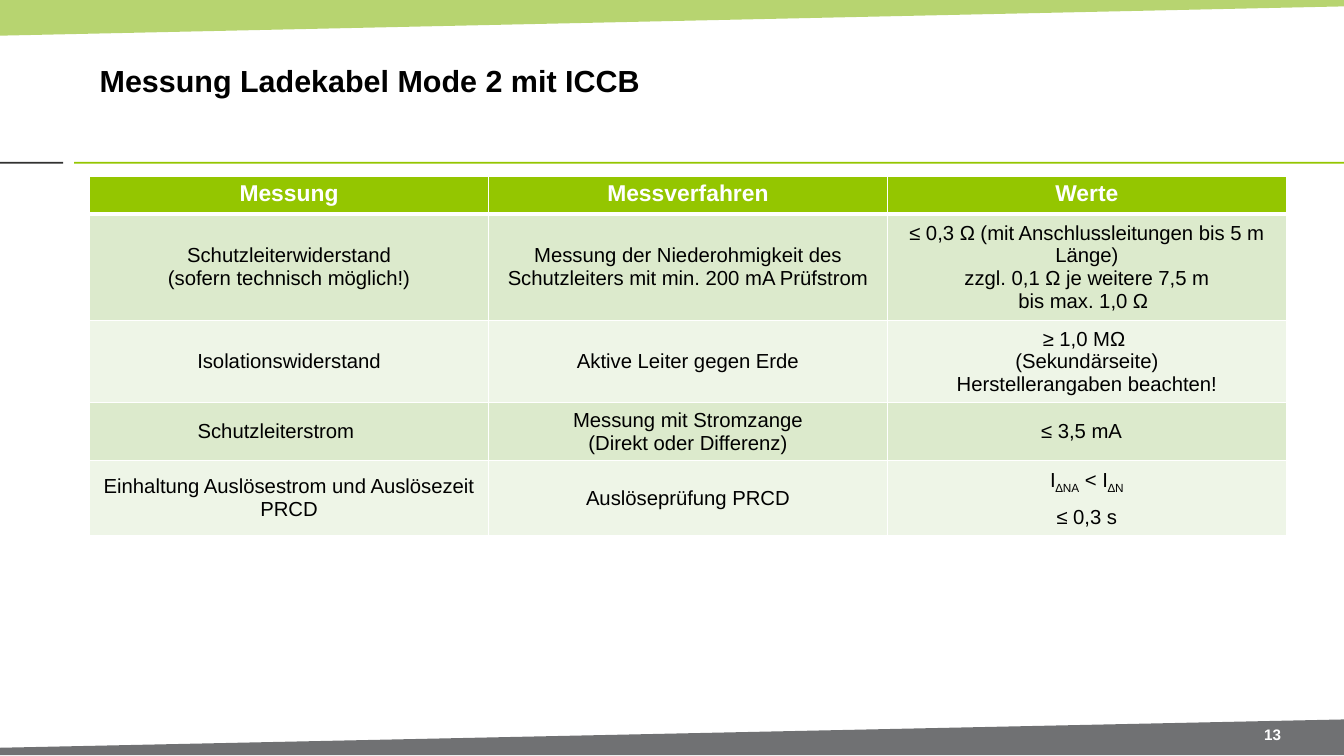
from lxml.etree import SubElement as Sub
from pptx import Presentation
from pptx.dml.color import RGBColor
from pptx.enum.shapes import MSO_SHAPE as Shape
from pptx.enum.text import MSO_ANCHOR as Anchor, PP_ALIGN as Align
from pptx.oxml.ns import qn
from pptx.util import Inches, Pt

FONT = "Arial"
BLACK = RGBColor(0x00, 0x00, 0x00)
WHITE = RGBColor(0xFF, 0xFF, 0xFF)
DARK = RGBColor(0x31, 0x31, 0x30)
GREY = RGBColor(0x70, 0x71, 0x73)
LEAF = RGBColor(0x95, 0xC0, 0x2A)
GREEN = RGBColor(0x94, 0xC6, 0x00)
BANDS = RGBColor(0xDC, 0xEA, 0xCC), RGBColor(0xEE, 0xF5, 0xE7)

HEAD = ["Messung", "Messverfahren", "Werte"]
ROWS = [
    ["Schutzleiterwiderstand\n(sofern technisch möglich!)",
     "Messung der Niederohmigkeit des Schutzleiters mit min. 200 mA Prüfstrom",
     "≤ 0,3 Ω (mit Anschlussleitungen bis 5 m Länge)\n"
     "zzgl. 0,1 Ω je weitere 7,5 m\nbis max. 1,0 Ω\t"],
    ["Isolationswiderstand", "Aktive Leiter gegen Erde",
     "≥ 1,0 MΩ \n(Sekundärseite)\nHerstellerangaben beachten!"],
    ["Schutzleiterstrom\t", "Messung mit Stromzange\n(Direkt oder Differenz)",
     "≤ 3,5 mA\t"],
    ["Einhaltung Auslösestrom und Auslösezeit PRCD", "Auslöseprüfung PRCD", ""],
]
LIMITS = [[("I", 0), ("∆NA", -25), (" < I", 0), ("∆N", -25)], [("≤ 0,3 s", 0)]]
HIGHS = [0.41, 1.08, 0.84, 0.6, 0.78]


class Deck:
    """Holds the style and the current slide, and draws its elements."""

    def __init__(self, wide, high):
        self.file = Presentation()
        self.file.slide_width = Inches(wide)
        self.file.slide_height = Inches(high)
        self.slide = self.file.slides.add_slide(self.file.slide_layouts[5])
        self.shapes = self.slide.shapes

    def style(self, par, size, color, bold=False, align=Align.CENTER):
        par.alignment = align
        font = par.font
        font.name, font.size, font.bold = FONT, Pt(size), bold
        font.color.rgb = color

    def paint(self, shape, color):
        shape.shadow.inherit = False
        shape.fill.solid()
        shape.fill.fore_color.rgb = color
        shape.line.fill.background()

    def band(self, points, color, alpha=100):
        spots = [(Inches(x), Inches(y)) for x, y in points]
        pen = self.shapes.build_freeform(*spots[0])
        pen.add_line_segments(spots[1:])
        shape = pen.convert_to_shape()
        self.paint(shape, color)
        if alpha < 100:
            tone = shape.fill._xPr.find(".//" + qn("a:srgbClr"))
            Sub(tone, qn("a:alpha"), val=str(alpha * 1000))

    def rule(self, left, wide, color):
        bar = self.shapes.add_shape(
            Shape.RECTANGLE, Inches(left), Inches(1.77), Inches(wide), Inches(0.02))
        self.paint(bar, color)

    def text(self, box, words, size, color, align):
        frame = box.text_frame
        frame.word_wrap = True
        frame.vertical_anchor = Anchor.MIDDLE
        frame.margin_left = frame.margin_right = Inches(0.11)
        frame.margin_top = frame.margin_bottom = Inches(0.06)
        frame.text = words
        self.style(frame.paragraphs[0], size, color, True, align)

    def title(self, words):
        box = self.shapes.title
        box.left, box.top = Inches(0.98), Inches(0.28)
        box.width, box.height = Inches(11.54), Inches(1.19)
        self.text(box, words, 24, BLACK, Align.LEFT)

    def number(self, words):
        box = self.shapes.add_textbox(
            Inches(13.49), Inches(7.89), Inches(0.86), Inches(0.29))
        self.text(box, words, 12, WHITE, Align.CENTER)

    def cell(self, cell, words, color, head):
        props = cell._tc.get_or_add_tcPr()
        for side in "LRTB":
            width = Pt(3 if head and side == "B" else 1)
            line = Sub(props, qn("a:ln" + side), w=str(width))
            Sub(Sub(line, qn("a:solidFill")), qn("a:srgbClr"), val=str(WHITE))
        cell.fill.solid()
        cell.fill.fore_color.rgb = color
        cell.vertical_anchor = Anchor.TOP if head else Anchor.MIDDLE
        cell.text = words
        for par in cell.text_frame.paragraphs:
            self.style(par, 18 if head else 16, WHITE if head else BLACK, head)

    def limits(self, cell, lines):
        frame = cell.text_frame
        for i, parts in enumerate(lines):
            par = frame.add_paragraph() if i else frame.paragraphs[0]
            par.line_spacing, par.space_after = 1.07, Pt(8)
            for words, base in parts:
                run = par.add_run()
                run.text = words
                if base:
                    run._r.get_or_add_rPr().set("baseline", str(base * 1000))
            self.style(par, 16, BLACK)

    def table(self, rows, highs):
        grid = self.shapes.add_table(
            len(rows), len(rows[0]), Inches(0.98), Inches(1.93),
            Inches(13.09), Inches(sum(highs))).table
        grid.horz_banding = False
        for r, (row, high) in enumerate(zip(rows, highs)):
            grid.rows[r].height = Inches(high)
            color = BANDS[(r - 1) % 2] if r else GREEN
            for c, words in enumerate(row):
                self.cell(grid.cell(r, c), words, color, r == 0)
        return grid


def main():
    deck = Deck(14.7, 8.27)
    deck.band([(0, 0), (14.7, 0), (14.7, 0.07), (0, 0.39)], LEAF, 67)
    deck.rule(0, 0.69, DARK)
    deck.rule(0.81, 13.89, GREEN)
    deck.band([(14.7, 8.26), (0, 8.26), (0, 8.18), (14.7, 7.87)], GREY)
    deck.title("Messung Ladekabel Mode 2 mit ICCB")
    deck.number("13")
    grid = deck.table([HEAD] + ROWS, HIGHS)
    deck.limits(grid.cell(4, 2), LIMITS)
    deck.file.save("out.pptx")


if __name__ == "__main__":
    main()
